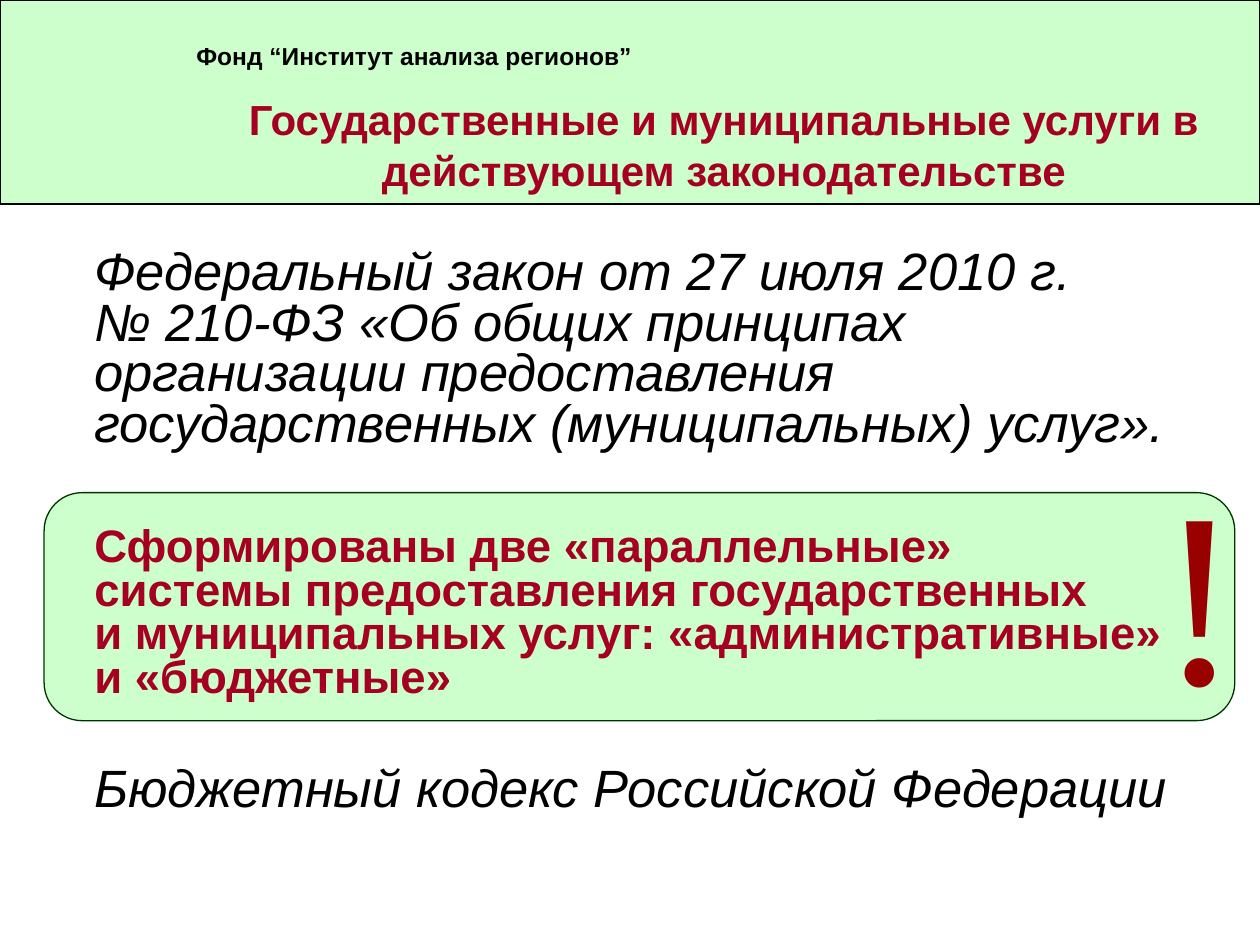
from dataclasses import dataclass

from pptx import Presentation
from pptx.dml.color import RGBColor
from pptx.enum.shapes import MSO_SHAPE as SHAPE
from pptx.enum.text import MSO_ANCHOR as ANCHOR, PP_ALIGN as ALIGN
from pptx.util import Inches, Pt


@dataclass(frozen=True)
class Theme:
    font: str = "Arial"
    mark_font: str = "Times New Roman"
    panel: str = "CCFFCC"
    panel_line: str = "003300"
    black: str = "000000"
    accent: str = "A50021"
    mark: str = "990000"
    label_size: int = 14
    title_size: int = 24
    callout_size: int = 26
    law_size: int = 30
    mark_size: int = 142


THEME = Theme()


def place(sp, left, top, width, height):
    sp.left, sp.top = Inches(left), Inches(top)
    sp.width, sp.height = Inches(width), Inches(height)


def add_panel(slide, kind, box, line):
    sp = slide.shapes.add_shape(kind, *map(Inches, box))
    sp.shadow.inherit = False
    sp.fill.solid()
    sp.fill.fore_color.rgb = RGBColor.from_string(THEME.panel)
    sp.line.color.rgb = RGBColor.from_string(line)
    sp.line.width = Pt(0.75)


def add_box(slide, box, wrap=True):
    sp = slide.shapes.add_textbox(*map(Inches, box))
    sp.text_frame.word_wrap = wrap
    return sp.text_frame


def write(p, text, size, color=THEME.black, font=THEME.font, bold=False,
          italic=False, align=ALIGN.LEFT, spacing=1.0, before=0, indent=0):
    p.text = text
    p.alignment = align
    p.line_spacing = spacing
    p.space_before = Pt(before)
    if indent:
        pPr = p._p.get_or_add_pPr()
        pPr.set("marL", str(Inches(indent)))
        pPr.set("indent", "0")
    for r in p.runs:
        r.font.name = font
        r.font.size = Pt(size)
        r.font.bold = bold
        r.font.italic = italic
        r.font.color.rgb = RGBColor.from_string(color)


def add_body(slide):
    tf = add_box(slide, (0.27, 1.94, 9.37, 5.28))
    law = dict(size=THEME.law_size, italic=True)
    callout = dict(size=THEME.callout_size, color=THEME.accent, bold=True)
    paragraphs = [
        ("Федеральный закон от 27 июля 2010 г.\v№ 210-ФЗ «Об общих принципах "
         "организации предоставления государственных (муниципальных) услуг».",
         law, 0),
        ("Сформированы две «параллельные»\vсистемы предоставления "
         "государственных\vи муниципальных услуг: «административные»\v"
         "и «бюджетные»", callout, 43),
        ("Бюджетный кодекс Российской Федерации", law, 37),
    ]
    for i, (text, style, before) in enumerate(paragraphs):
        p = tf.add_paragraph() if i else tf.paragraphs[0]
        write(p, text, spacing=0.8, before=before, indent=0.38, **style)


def add_title(slide, text):
    title = slide.shapes.title
    slide.shapes._spTree.append(title._element)
    place(title, 1.76, 0.67, 7.97, 0.95)
    title.text_frame.vertical_anchor = ANCHOR.MIDDLE
    write(title.text_frame.paragraphs[0], text, THEME.title_size,
          color=THEME.accent, bold=True, align=ALIGN.CENTER)


def main():
    prs = Presentation()
    prs.slide_width, prs.slide_height = Inches(10), Inches(7.5)
    slide = prs.slides.add_slide(prs.slide_layouts[5])

    add_panel(slide, SHAPE.FLOWCHART_ALTERNATE_PROCESS,
              (0.35, 3.91, 9.45, 1.81), THEME.panel_line)
    add_body(slide)
    mark = add_box(slide, (9.1, 3.41, 0.86, 2.47), wrap=False)
    write(mark.paragraphs[0], "!", THEME.mark_size, color=THEME.mark,
          font=THEME.mark_font)

    add_panel(slide, SHAPE.RECTANGLE, (0, 0, 10, 1.62), THEME.black)
    add_title(slide, "Государственные и муниципальные услуги "
                     "в действующем законодательстве")
    label = add_box(slide, (1.45, 0.28, 4.88, 0.31))
    write(label.paragraphs[0], "Фонд “Институт анализа регионов”",
          THEME.label_size, bold=True, indent=0.01)

    prs.save("out.pptx")


if __name__ == "__main__":
    main()
